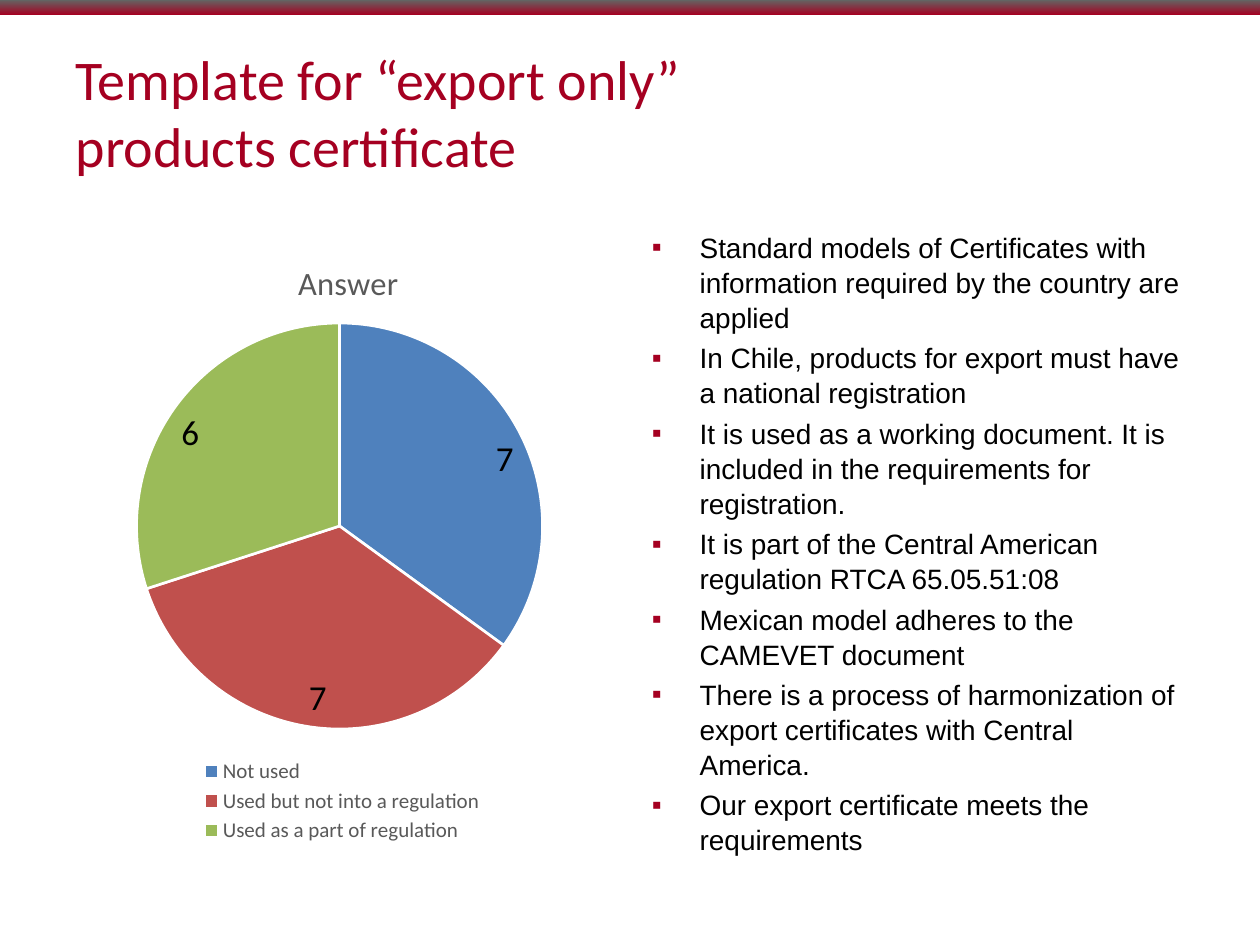
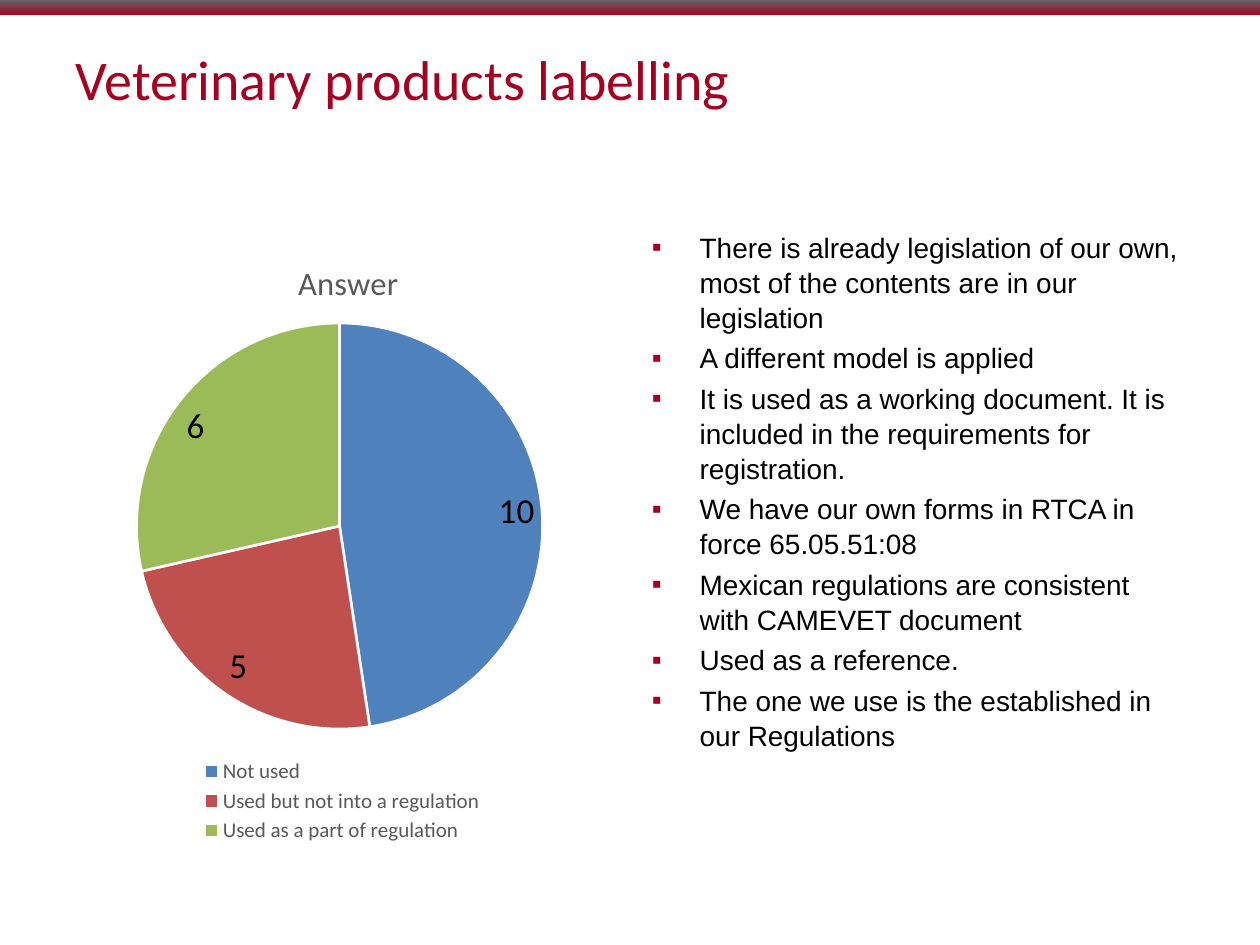
from dataclasses import dataclass

from lxml.etree import SubElement
from pptx import Presentation
from pptx.chart.data import CategoryChartData
from pptx.dml.color import RGBColor
from pptx.enum.chart import XL_CHART_TYPE, XL_LABEL_POSITION, XL_LEGEND_POSITION
from pptx.enum.shapes import MSO_SHAPE
from pptx.enum.text import MSO_ANCHOR, MSO_AUTO_SIZE, PP_ALIGN
from pptx.oxml import parse_xml
from pptx.oxml.ns import nsdecls, qn
from pptx.util import Inches, Pt


@dataclass(frozen=True)
class Theme:
    """Colours, fonts and type sizes of the deck."""
    red: str = "A50021"
    dark: str = "636463"
    grey: str = "595959"
    black: str = "000000"
    white: str = "FFFFFF"
    slices: tuple = ("4F81BD", "C0504D", "9BBB59")
    head: str = "Calibri"
    body: str = "Arial"
    title: float = 32
    text: float = 16
    name: float = 18.6
    label: float = 20
    key: float = 12


THEME = Theme()
WIDE, HIGH = 10, 7.5
EDGE, GAP = 0.51, 0.15
COL = (WIDE - 2 * EDGE - GAP) / 2
TOP, TALL = 1.77, 4.96
KEYS = ("Not used", "Used but not into a regulation", "Used as a part of regulation")
SLIDES = (
    ("Template for “export only”\vproducts certificate", (7, 7, 6), (
        "Standard models of Certificates with information required by the country are applied",
        "In Chile, products for export must have a national registration",
        "It is used as a working document. It is included in the requirements for registration.",
        "It is part of the Central American regulation RTCA 65.05.51:08",
        "Mexican model adheres to the CAMEVET document",
        "There is a process of harmonization of export certificates with Central America.",
        "Our export certificate meets the requirements",
    )),
    ("Veterinary products labelling", (10, 5, 6), (
        "There is already legislation of our own, most of the contents are in our legislation",
        "A different model is applied",
        "It is used as a working document. It is included in the requirements for registration.",
        "We have our own forms in RTCA in force 65.05.51:08",
        "Mexican regulations are consistent with CAMEVET document",
        "Used as a reference.",
        "The one we use is the established in our Regulations",
    )),
)


def paint(font, face, size, tint):
    """Set the face, size and colour of a font."""
    font.name, font.size, font.bold = face, Pt(size), False
    font.color.rgb = RGBColor.from_string(tint)


def column(index):
    """Give the box of a content column."""
    return [Inches(n) for n in (EDGE + index * (COL + GAP), TOP, COL, TALL)]


def add_band(slide):
    """Draw the shaded band across the top."""
    band = slide.shapes.add_shape(MSO_SHAPE.RECTANGLE, 0, 0, Inches(WIDE), Inches(0.12))
    band.shadow.inherit = False
    band.line.fill.background()
    band.fill.gradient()
    band.fill.gradient_angle = 90
    for stop, tint in zip(band.fill.gradient_stops, (THEME.red, THEME.dark)):
        stop.color.rgb = RGBColor.from_string(tint)


def set_title(slide, words):
    """Fill and place the slide title."""
    title = slide.shapes.title
    title.left, title.top = Inches(0.5), Inches(0.3)
    title.width, title.height = Inches(9), Inches(0.98)
    frame = title.text_frame
    frame.text = words
    frame.auto_size = MSO_AUTO_SIZE.NONE
    frame.vertical_anchor = MSO_ANCHOR.TOP
    for para in frame.paragraphs:
        para.alignment = PP_ALIGN.LEFT
        for run in para.runs:
            paint(run.font, THEME.head, THEME.title, THEME.red)


def add_mark(para):
    """Give a paragraph a red square bullet."""
    props = para._p.get_or_add_pPr()
    props.set("marL", str(Inches(0.38)))
    props.set("indent", str(-Inches(0.38)))
    tint = SubElement(props, qn("a:buClr"))
    SubElement(tint, qn("a:srgbClr")).set("val", THEME.red)
    SubElement(props, qn("a:buFont")).set("typeface", THEME.body)
    SubElement(props, qn("a:buChar")).set("char", "▪")


def add_list(slide, lines):
    """Write the comments in the right column."""
    frame = slide.shapes.add_textbox(*column(1)).text_frame
    frame.word_wrap = True
    frame.text = "\n".join(lines)
    for para in frame.paragraphs:
        para.line_spacing = 1.04
        para.space_before = Pt(THEME.text * 0.2)
        add_mark(para)
        for run in para.runs:
            paint(run.font, THEME.body, THEME.text, THEME.black)


def place(item, index, inner=False, **shares):
    """Fix a chart element at shares of the chart's size."""
    old = item.find(qn("c:layout"))
    if old is not None:
        item.remove(old)
    target = '<c:layoutTarget val="inner"/>' if inner else ""
    modes = "".join(f'<c:{axis}Mode val="edge"/>' for axis in "xy")
    sizes = "".join(f'<c:{key} val="{share}"/>' for key, share in shares.items())
    item.insert(index, parse_xml(
        f'<c:layout {nsdecls("c")}><c:manualLayout>{target}{modes}{sizes}'
        "</c:manualLayout></c:layout>"))


def add_pie(slide, counts):
    """Chart the answers in the left column."""
    data = CategoryChartData()
    data.categories = KEYS
    data.add_series("Answer", counts)
    chart = slide.shapes.add_chart(XL_CHART_TYPE.PIE, *column(0), data).chart
    paint(chart.font, THEME.head, 10, THEME.black)

    chart.has_title = True
    frame = chart.chart_title.text_frame
    frame.text = "Answer"
    paint(frame.paragraphs[0].runs[0].font, THEME.head, THEME.name, THEME.grey)
    place(chart.chart_title._element, 1, x=0.41, y=0.05)

    chart.has_legend = True
    legend = chart.legend
    legend.position = XL_LEGEND_POSITION.BOTTOM
    legend.include_in_layout = False
    paint(legend.font, THEME.head, THEME.key, THEME.grey)
    place(legend._element, 1, x=0.24, y=0.85, w=0.52, h=0.15)

    plot = chart.plots[0]
    plot.vary_by_categories = True
    plot.has_data_labels = True
    labels = plot.data_labels
    labels.show_value, labels.show_percentage = True, False
    labels.position = XL_LABEL_POSITION.INSIDE_END
    paint(labels.font, THEME.head, THEME.label, THEME.black)
    for index, tint in enumerate(THEME.slices):
        look = plot.series[0].points[index].format
        look.fill.solid()
        look.fill.fore_color.rgb = RGBColor.from_string(tint)
        look.line.color.rgb = RGBColor.from_string(THEME.white)
        look.line.width = Pt(1.5)
    area = chart._chartSpace.find(f'.//{qn("c:plotArea")}')
    place(area, 0, True, x=0.13, y=0.16, w=0.73, h=0.65)


def main():
    """Build both slides and save the deck."""
    deck = Presentation()
    deck.slide_width, deck.slide_height = Inches(WIDE), Inches(HIGH)
    for title, counts, lines in SLIDES:
        slide = deck.slides.add_slide(deck.slide_layouts[5])
        add_band(slide)
        set_title(slide, title)
        add_list(slide, lines)
        add_pie(slide, counts)
    deck.save("out.pptx")


if __name__ == "__main__":
    main()
